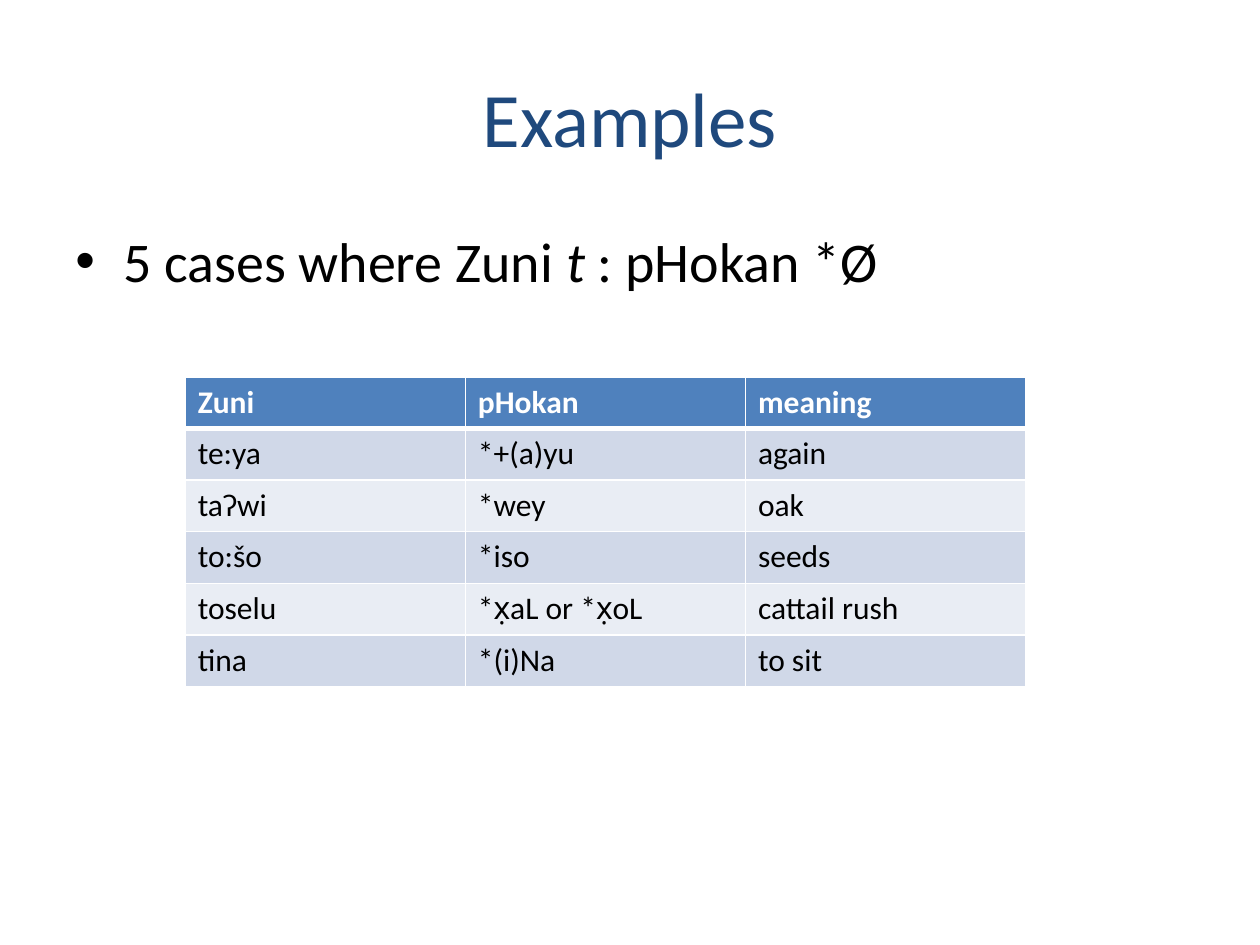
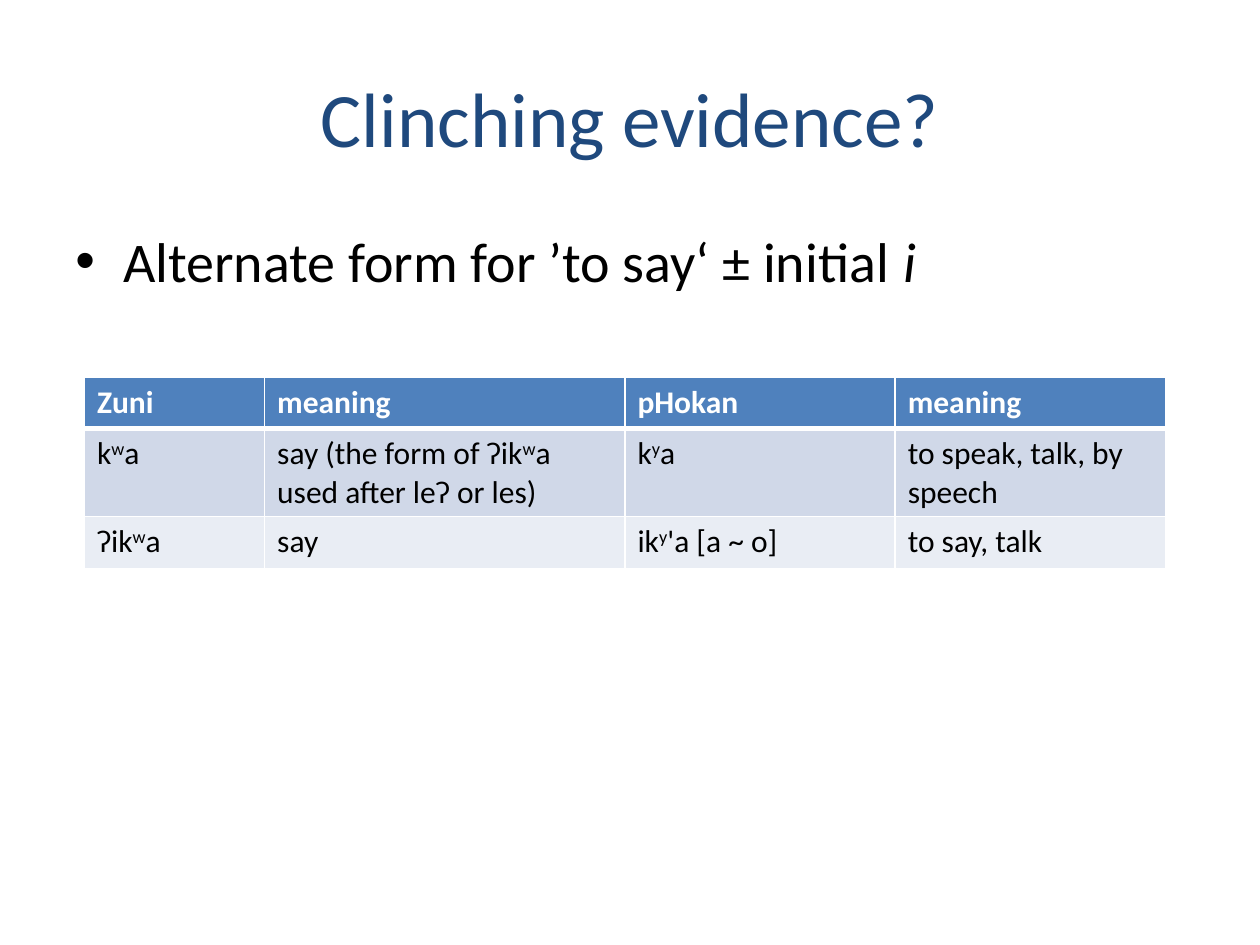
from dataclasses import dataclass

from lxml.etree import SubElement
from pptx import Presentation
from pptx.dml.color import RGBColor
from pptx.enum.text import MSO_ANCHOR, PP_ALIGN
from pptx.oxml.ns import qn
from pptx.util import Inches, Pt

FONT = "Calibri"
NAVY, BLACK, WHITE = "1F497D", "000000", "FFFFFF"
HEADER_FILL = "4F81BD"
BAND_FILLS = ("D0D8E8", "E9EDF4")
ITALIC, SUPERSCRIPT = "_", "^"
TABLE_TOP = 2.99
LINE_ROW, TWO_LINE_ROW = 0.41, 0.7


@dataclass
class WordTable:
    left: float
    width: float
    column_weights: tuple[float, ...]
    row_heights: tuple[float, ...]
    rows: tuple[tuple[str, ...], ...]


@dataclass
class PageContent:
    title: str
    bullet: str
    table: WordTable


PAGES = (
    PageContent(
        "Examples",
        "5 cases where Zuni _t_ : pHokan *Ø",
        WordTable(1.47, 6.67, (1, 1, 1), (LINE_ROW,) * 6, (
            ("Zuni", "pHokan", "meaning"),
            ("te:ya", "*+(a)yu", "again"),
            ("taʔwi", "*wey", "oak"),
            ("to:šo", "*iso", "seeds"),
            ("toselu", "*x̣aL or *x̣oL", "cattail rush"),
            ("tina", "*(i)Na", "to sit"),
        )),
    ),
    PageContent(
        "Clinching evidence?",
        "Alternate form for ’to say‘ ± initial _i_",
        WordTable(0.67, 8.58, (1, 2, 1.5, 1.5), (LINE_ROW, TWO_LINE_ROW, LINE_ROW), (
            ("Zuni", "meaning", "pHokan", "meaning"),
            ("k^w^a", "say (the form of ʔik^w^a used after leʔ or les)",
             "k^y^a", "to speak, talk, by speech"),
            ("ʔik^w^a", "say", "ik^y^'a [a ~ o]", "to say, talk"),
        )),
    ),
)


def rgb(color: str) -> RGBColor:
    return RGBColor.from_string(color)


def write_text(para, text: str, *, size: float, color: str, bold: bool = False) -> None:
    """Write text in which _x_ marks italics and ^x^ marks a superscript."""
    mark = SUPERSCRIPT if SUPERSCRIPT in text else ITALIC
    for index, part in enumerate(text.split(mark)):
        if not part:
            continue
        span = para.add_run()
        span.text = part
        span.font.name = FONT
        span.font.size = Pt(size)
        span.font.bold = bold
        span.font.color.rgb = rgb(color)
        if index % 2 and mark == ITALIC:
            span.font.italic = True
        elif index % 2:
            span.font._element.set("baseline", "30000")


def add_text_frame(page, top: float, height: float):
    box = page.shapes.add_textbox(Inches(0.5), Inches(top), Inches(9), Inches(height))
    box.text_frame.word_wrap = True
    return box.text_frame


def add_title(page, text: str) -> None:
    frame = add_text_frame(page, 0.3, 1.25)
    frame.vertical_anchor = MSO_ANCHOR.MIDDLE
    para = frame.paragraphs[0]
    para.alignment = PP_ALIGN.CENTER
    write_text(para, text, size=44, color=NAVY)


def add_bullet(page, text: str) -> None:
    para = add_text_frame(page, 1.75, 4.95).paragraphs[0]
    para.space_before = Pt(6.4)
    properties = para._p.get_or_add_pPr()
    indent = Inches(0.38)
    properties.set("marL", str(indent))
    properties.set("indent", str(-indent))
    SubElement(properties, qn("a:buFont"), typeface="Arial")
    SubElement(properties, qn("a:buChar"), char="•")
    write_text(para, text, size=32, color=BLACK)


def set_borders(cell, *, top: float, bottom: float) -> None:
    properties = cell._tc.get_or_add_tcPr()
    for side, width in (("L", 1), ("R", 1), ("T", top), ("B", bottom)):
        line = SubElement(properties, qn(f"a:ln{side}"), w=str(Pt(width)))
        fill = SubElement(line, qn("a:solidFill"))
        SubElement(fill, qn("a:srgbClr"), val=WHITE)


def add_word_table(page, content: WordTable) -> None:
    table = page.shapes.add_table(
        len(content.rows), len(content.column_weights),
        Inches(content.left), Inches(TABLE_TOP),
        Inches(content.width), Inches(sum(content.row_heights)),
    ).table
    table.horz_banding = False
    unit = content.width / sum(content.column_weights)
    for column, weight in zip(table.columns, content.column_weights):
        column.width = Inches(unit * weight)
    for row, height in zip(table.rows, content.row_heights):
        row.height = Inches(height)
    for row_index, words in enumerate(content.rows):
        header = row_index == 0
        for column_index, word in enumerate(words):
            cell = table.cell(row_index, column_index)
            set_borders(cell, top=3 if row_index == 1 else 1, bottom=3 if header else 1)
            cell.fill.solid()
            cell.fill.fore_color.rgb = rgb(
                HEADER_FILL if header else BAND_FILLS[(row_index - 1) % 2])
            write_text(cell.text_frame.paragraphs[0], word, size=18,
                       color=WHITE if header else BLACK, bold=header)


def main() -> None:
    deck = Presentation()
    deck.slide_width, deck.slide_height = Inches(10), Inches(7.5)
    for content in PAGES:
        page = deck.slides.add_slide(deck.slide_layouts[6])
        add_title(page, content.title)
        add_bullet(page, content.bullet)
        add_word_table(page, content.table)
    deck.save("out.pptx")


if __name__ == "__main__":
    main()
